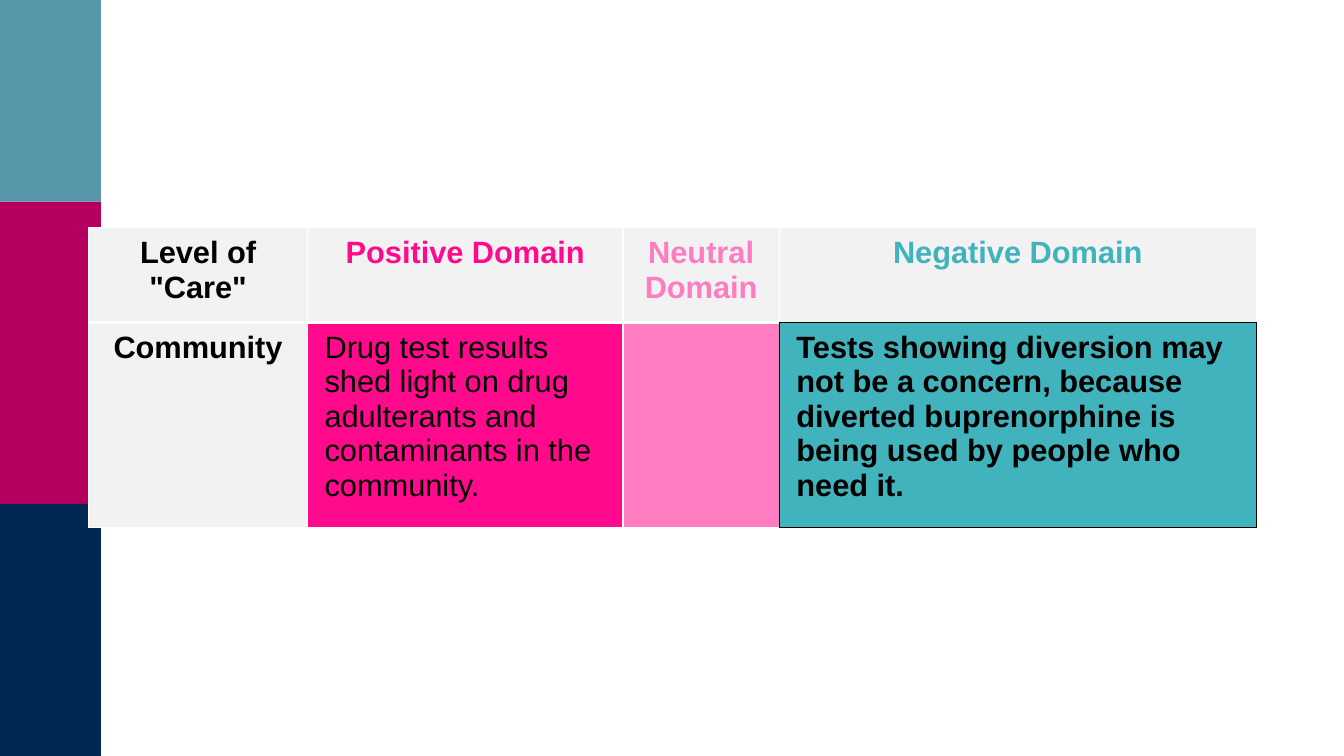
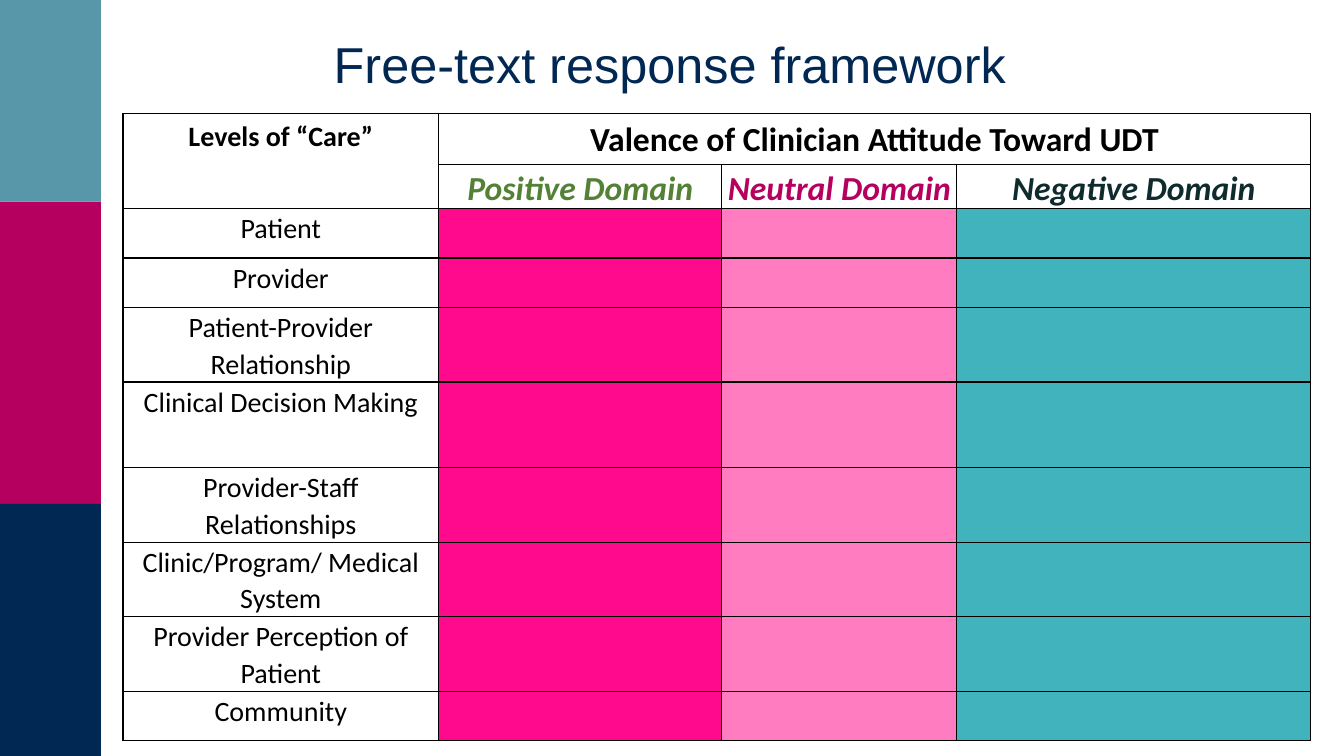
from lxml.etree import SubElement
from pptx import Presentation
from pptx.dml.color import RGBColor
from pptx.enum.text import MSO_ANCHOR, PP_ALIGN
from pptx.oxml.ns import qn
from pptx.util import Inches, Pt

BLACK = RGBColor(0x00, 0x00, 0x00)
WHITE = RGBColor(0xFF, 0xFF, 0xFF)
NAVY = RGBColor(0x00, 0x28, 0x53)
BERRY = RGBColor(0xB6, 0x00, 0x60)
STEEL = RGBColor(0x57, 0x97, 0xA9)
PINK = RGBColor(0xFF, 0x0A, 0x8C)
LIGHT_PINK = RGBColor(0xFF, 0x7C, 0xC1)
TEAL = RGBColor(0x41, 0xB3, 0xBC)
PALE_GRAY = RGBColor(0xF2, 0xF2, 0xF2)
GREEN = RGBColor(0x53, 0x81, 0x35)
DARK_TEAL = RGBColor(0x10, 0x2B, 0x2E)

DOMAINS = ["Positive Domain", "Neutral Domain", "Negative Domain"]
DOMAIN_FILLS = [PINK, LIGHT_PINK, TEAL]
CURVE_STEPS = 12

SIDE_BANDS = [
    (BERRY, (0, 2.11), [
        [(0.67, 2.21)],
        [(0.83, 2.24), (0.85, 2.28), (0.85, 2.36)],
        [(0.85, 4.35)],
        [(0.85, 4.42), (0.82, 4.48), (0.67, 4.51)],
        [(0, 4.64)],
    ]),
    (STEEL, (0, 2.05), [
        [(0.59, 2.13)],
        [(0.83, 2.17), (0.85, 2.11), (0.85, 1.89)],
        [(0.87, 1.4), (0.85, 0.73), (0.85, 0)],
        [(0, 0)],
    ]),
    (NAVY, (0, 4.7), [
        [(0.59, 4.61)],
        [(0.83, 4.57), (0.85, 4.63), (0.85, 4.86)],
        [(0.87, 5.34), (0.85, 6.78), (0.85, 7.5)],
        [(0, 7.5)],
    ]),
]


def curve_points(start, first, second, end):
    for step in range(1, CURVE_STEPS + 1):
        t = step / CURVE_STEPS
        u = 1 - t
        yield tuple(
            u**3 * a + 3 * u**2 * t * b + 3 * u * t**2 * c + t**3 * d
            for a, b, c, d in zip(start, first, second, end)
        )


def add_side_bands(slide):
    for color, start, segments in SIDE_BANDS:
        points = [start]
        for segment in segments:
            points += segment if len(segment) == 1 else curve_points(points[-1], *segment)
        builder = slide.shapes.build_freeform(*start, scale=Inches(1))
        builder.add_line_segments(points[1:], close=True)
        shape = builder.convert_to_shape()
        shape.shadow.inherit = False
        shape.fill.solid()
        shape.fill.fore_color.rgb = color
        shape.line.fill.background()


def write_text(frame, text, font="Arial", size=22, color=BLACK, bold=False,
               italic=False, align=PP_ALIGN.LEFT, spacing=1.0):
    frame.word_wrap = True
    paragraph = frame.paragraphs[0]
    paragraph.alignment = align
    paragraph.line_spacing = spacing
    run = paragraph.add_run()
    run.text = text
    run.font.name = font
    run.font.size = Pt(size)
    run.font.bold = bold
    run.font.italic = italic
    run.font.color.rgb = color


def style_cell(cell, fill=None, margins=(0.05, 0.01, 0.05, 0), border=BLACK, **edges):
    cell.margin_left, cell.margin_top, cell.margin_right, cell.margin_bottom = map(Inches, margins)
    properties = cell._tc.get_or_add_tcPr()
    for side in "LRTB":
        color, width = edges.get(side, (border, 1))
        line = SubElement(properties, qn(f"a:ln{side}"), w=str(Pt(width)))
        solid = SubElement(line, qn("a:solidFill"))
        SubElement(solid, qn("a:srgbClr"), val=str(color))
    if fill is None:
        cell.fill.background()
    else:
        cell.fill.solid()
        cell.fill.fore_color.rgb = fill


def add_grid(slide, left, top, widths, heights):
    frame = slide.shapes.add_table(
        len(heights), len(widths), Inches(left), Inches(top),
        Inches(sum(widths)), Inches(sum(heights)))
    table = frame.table
    table.first_row = table.horz_banding = False
    for column, width in zip(table.columns, widths):
        column.width = Inches(width)
    for row, height in zip(table.rows, heights):
        row.height = Inches(height)
    return table


def add_title(slide, text, left, top, width, height):
    frame = slide.shapes.add_textbox(
        Inches(left), Inches(top), Inches(width), Inches(height)).text_frame
    frame.margin_left = frame.margin_right = Inches(0.05)
    frame.margin_top = frame.margin_bottom = Inches(0.05)
    frame.vertical_anchor = MSO_ANCHOR.MIDDLE
    write_text(frame, text, size=36, color=NAVY)


def add_community_table(slide, left, top):
    table = add_grid(slide, left, top, [2.17, 3.13, 1.55, 4.73], [0.94, 2.03])
    margins = (0.17, 0.08, 0.17, 0.08)
    headings = zip(['Level of "Care"'] + DOMAINS, [BLACK] + DOMAIN_FILLS)
    for column, (heading, color) in enumerate(headings):
        cell = table.cell(0, column)
        bottom = (BLACK, 1) if column == 3 else (WHITE, 3)
        style_cell(cell, PALE_GRAY, margins, WHITE, B=bottom)
        write_text(cell.text_frame, heading, color=color, bold=True, align=PP_ALIGN.CENTER)

    answers = [
        "Community",
        "Drug test results shed light on drug adulterants and contaminants in the community. ",
        "",
        "Tests showing diversion may not be a concern, because diverted buprenorphine is "
        "being used by people who need it. ",
    ]
    for column, (answer, fill) in enumerate(zip(answers, [PALE_GRAY] + DOMAIN_FILLS)):
        cell = table.cell(1, column)
        border = BLACK if column == 3 else WHITE
        right = (BLACK if column >= 2 else WHITE, 1)
        top_edge = (BLACK, 1) if column == 3 else (WHITE, 3)
        style_cell(cell, fill, margins, border, R=right, T=top_edge)
        if answer:
            write_text(cell.text_frame, answer, bold=column in (0, 3),
                       align=PP_ALIGN.LEFT if column else PP_ALIGN.CENTER)


def add_framework_table(slide, left, top):
    levels = [
        ("Patient", 0.49),
        ("Provider", 0.49),
        ("Patient-Provider Relationship", 0.74),
        ("Clinical Decision Making", 0.85),
        ("Provider-Staff Relationships", 0.74),
        ("Clinic/Program/ Medical System", 0.74),
        ("Provider Perception of Patient", 0.74),
        ("Community", 0.49),
    ]
    table = add_grid(slide, left, top, [3.13, 2.81, 2.33, 3.51],
                     [0.5, 0.44] + [height for _, height in levels])
    body = dict(font="Calibri", size=20, align=PP_ALIGN.CENTER, spacing=1.07)
    heading = dict(body, size=24, bold=True)

    for row in range(len(table.rows)):
        for column in range(len(table.columns)):
            fill = DOMAIN_FILLS[column - 1] if row > 1 and column else None
            margins = (0.05, 0.01, 0.05, 0) if row else (0.07, 0.03, 0.07, 0.03)
            style_cell(table.cell(row, column), fill, margins)

    table.cell(0, 0).merge(table.cell(1, 0))
    table.cell(0, 1).merge(table.cell(0, 3))
    write_text(table.cell(0, 0).text_frame, "Levels of “Care”", **dict(body, bold=True))
    write_text(table.cell(0, 1).text_frame, "Valence of Clinician Attitude Toward UDT", **heading)
    for column, (domain, color) in enumerate(zip(DOMAINS, [GREEN, BERRY, DARK_TEAL]), 1):
        write_text(table.cell(1, column).text_frame, domain, color=color, italic=True, **heading)
    for row, (level, _) in enumerate(levels, 2):
        write_text(table.cell(row, 0).text_frame, level, **body)


def add_banded_slide(presentation):
    slide = presentation.slides.add_slide(presentation.slide_layouts[6])
    add_side_bands(slide)
    return slide


def main():
    presentation = Presentation()
    presentation.slide_width = Inches(13.33)
    presentation.slide_height = Inches(7.5)

    add_community_table(add_banded_slide(presentation), 0.88, 2.26)

    framework_slide = add_banded_slide(presentation)
    add_title(framework_slide, "Free-text response framework", 3.26, 0.32, 7.68, 0.62)
    add_framework_table(framework_slide, 1.22, 1.13)

    presentation.save("out.pptx")


if __name__ == "__main__":
    main()
